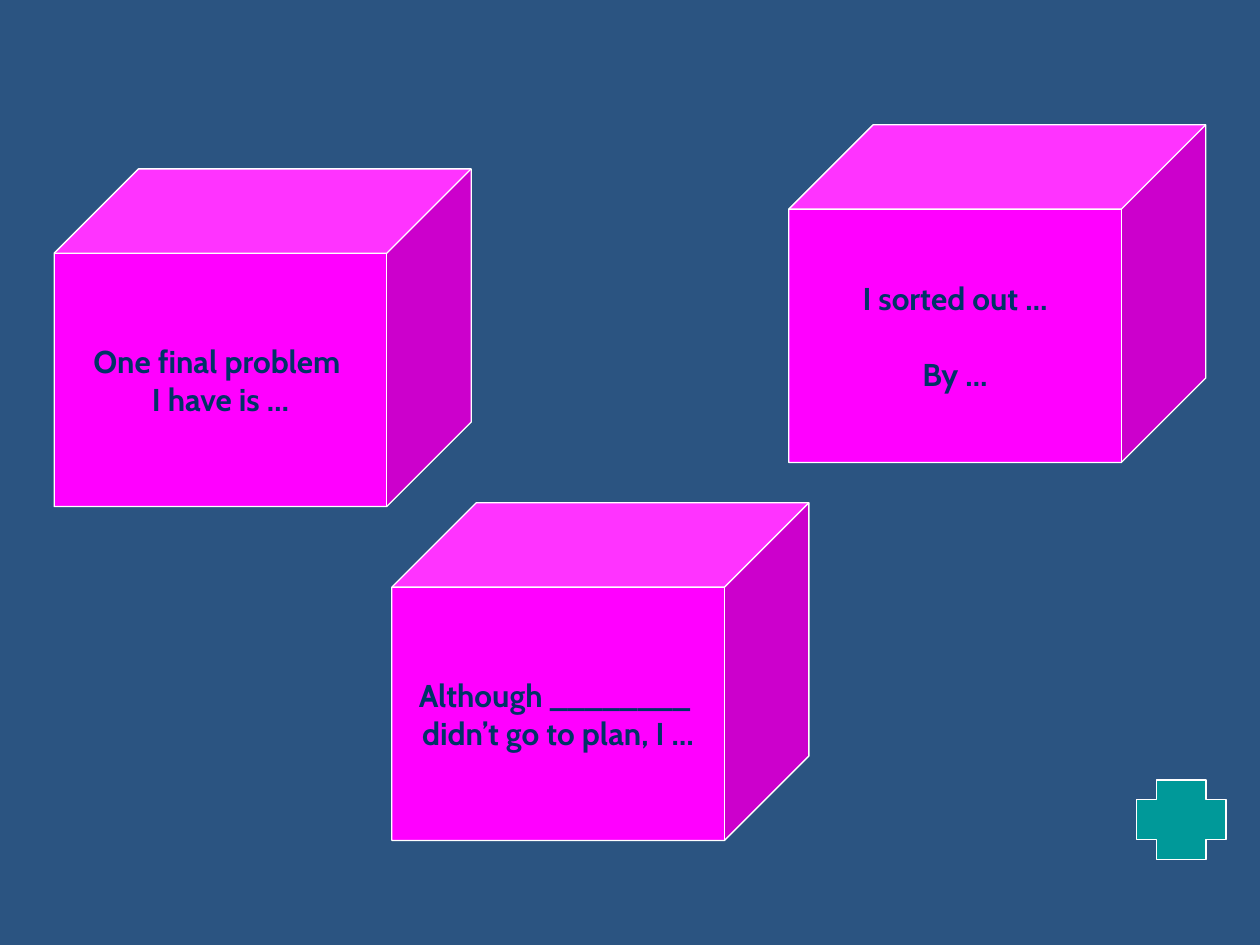
from pptx import Presentation
from pptx.dml.color import RGBColor
from pptx.enum.shapes import MSO_SHAPE
from pptx.enum.text import MSO_ANCHOR, PP_ALIGN
from pptx.util import Inches, Pt

COLORS = {"back": "2B5481", "cube": "FF00FF", "plus": "009999",
          "line": "FFFFFF", "text": "003366"}


def color(name):
    return RGBColor.from_string(COLORS[name])


def add_solid(kind, left, top, width, height, fill):
    solid = slide.shapes.add_shape(
        kind, Inches(left), Inches(top), Inches(width), Inches(height))
    solid.shadow.inherit = False
    solid.adjustments[0] = 0.25
    solid.fill.solid()
    solid.fill.fore_color.rgb = color(fill)
    solid.line.color.rgb = color("line")
    solid.line.width = Pt(0.75)
    return solid


deck = Presentation()
deck.slide_width = Inches(10)
deck.slide_height = Inches(7.5)
slide = deck.slides.add_slide(deck.slide_layouts[6])
slide.background.fill.solid()
slide.background.fill.fore_color.rgb = color("back")

cubes = [
    (0.43, 1.34, 0, [["One final problem "], ["I have is …"]]),
    (6.26, 0.99, 22, [["I sorted out …"], ["By …"]]),
    (3.11, 3.99, 0, [["Although ________ ", "didn’t go to plan, I …"]]),
]
for left, top, gap, paras in cubes:
    cube = add_solid(MSO_SHAPE.CUBE, left, top, 3.31, 2.68, "cube")
    frame = cube.text_frame
    frame.word_wrap = False
    frame.vertical_anchor = MSO_ANCHOR.MIDDLE
    for i, lines in enumerate(paras):
        para = frame.add_paragraph() if i else frame.paragraphs[0]
        para.alignment = PP_ALIGN.CENTER
        if i and gap:
            para.space_before = Pt(gap)
        for j, line in enumerate(lines):
            if j:
                para.add_line_break()
            run = para.add_run()
            run.text = line
            run.font.name = "Cabin"
            run.font.size = Pt(18)
            run.font.bold = True
            run.font.color.rgb = color("text")

add_solid(MSO_SHAPE.CROSS, 9.02, 6.19, 0.71, 0.63, "plus")

deck.save("out.pptx")
